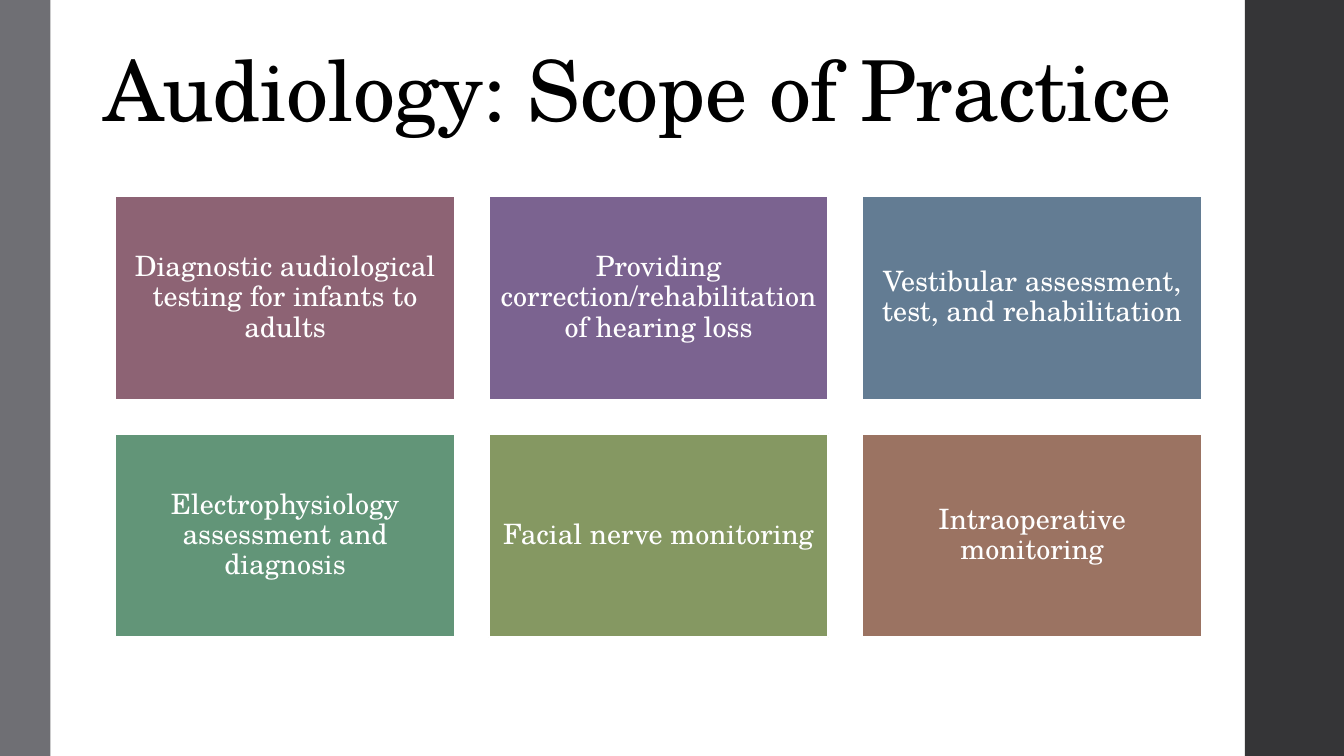
from dataclasses import dataclass

from pptx import Presentation
from pptx import util as u
from pptx.dml.color import RGBColor
from pptx.enum import shapes, text

FONT = "TeX Gyre Schola"
BLACK = RGBColor(0x00, 0x00, 0x00)
WHITE = RGBColor(0xFF, 0xFF, 0xFF)
GRAY = RGBColor(0x6F, 0x6F, 0x74)
CHARCOAL = RGBColor(0x35, 0x35, 0x37)
MAUVE = RGBColor(0x8D, 0x63, 0x74)
PURPLE = RGBColor(0x7B, 0x63, 0x90)
BLUE = RGBColor(0x63, 0x7C, 0x93)
GREEN = RGBColor(0x62, 0x95, 0x78)
OLIVE = RGBColor(0x85, 0x98, 0x62)
BROWN = RGBColor(0x9B, 0x73, 0x62)

SLIDE_WIDTH, SLIDE_HEIGHT = 960, 540
COLUMNS = 3
GRID_LEFT, GRID_TOP = 82.4, 139.9
TILE_WIDTH, TILE_HEIGHT = 242.6, 145.6
COLUMN_PITCH, ROW_PITCH = 266.8, 169.8


@dataclass(frozen=True)
class Box:
    left: float
    top: float
    width: float
    height: float


@dataclass(frozen=True)
class Tile:
    label: str
    color: RGBColor


TILES = (
    Tile("Diagnostic audiological testing for infants to adults", MAUVE),
    Tile("Providing correction/rehabilitation of hearing loss", PURPLE),
    Tile("Vestibular assessment, test, and rehabilitation", BLUE),
    Tile("Electrophysiology assessment and diagnosis", GREEN),
    Tile("Facial nerve monitoring", OLIVE),
    Tile("Intraoperative monitoring", BROWN),
)


def lengths(box: Box) -> tuple[u.Length, ...]:
    return u.Pt(box.left), u.Pt(box.top), u.Pt(box.width), u.Pt(box.height)


def add_rectangle(slide, box: Box, color: RGBColor):
    shape = slide.shapes.add_shape(shapes.MSO_SHAPE.RECTANGLE, *lengths(box))
    shape.shadow.inherit = False
    shape.fill.solid()
    shape.fill.fore_color.rgb = color
    shape.line.fill.background()
    return shape


def write(shape, wording: str, size: float, color: RGBColor, spacing: float):
    shape.text_frame.text = wording
    shape.text_frame.word_wrap = True
    paragraph = shape.text_frame.paragraphs[0]
    paragraph.line_spacing = spacing
    run = paragraph.runs[0]
    run.font.name = FONT
    run.font.size = u.Pt(size)
    run.font.color.rgb = color
    return paragraph


def add_title(slide, wording: str) -> None:
    title = slide.shapes.add_textbox(*lengths(Box(67, 6.5, 806.4, 95.8)))
    paragraph = write(title, wording, 60, BLACK, 0.85)
    title.text_frame.vertical_anchor = text.MSO_ANCHOR.BOTTOM
    paragraph.runs[0]._r.get_or_add_rPr().set("spc", "-50")


def add_tile(slide, tile: Tile, index: int) -> None:
    row, column = divmod(index, COLUMNS)
    box = Box(GRID_LEFT + column * COLUMN_PITCH, GRID_TOP + row * ROW_PITCH,
              TILE_WIDTH, TILE_HEIGHT)
    shape = add_rectangle(slide, box, tile.color)
    shape.line.color.rgb = WHITE
    shape.line.width = u.Pt(1.35)
    paragraph = write(shape, tile.label, 20, WHITE, 0.9)
    paragraph.alignment = text.PP_ALIGN.CENTER
    frame = shape.text_frame
    frame.vertical_anchor = text.MSO_ANCHOR.MIDDLE
    frame.margin_left = frame.margin_right = u.Pt(6)
    frame.margin_top = frame.margin_bottom = u.Pt(6)


def main() -> None:
    presentation = Presentation()
    presentation.slide_width = u.Pt(SLIDE_WIDTH)
    presentation.slide_height = u.Pt(SLIDE_HEIGHT)
    slide = presentation.slides.add_slide(presentation.slide_layouts[6])
    add_rectangle(slide, Box(889.2, 0, 70.8, SLIDE_HEIGHT), CHARCOAL)
    add_rectangle(slide, Box(0, 0, 36, SLIDE_HEIGHT), GRAY)
    add_title(slide, "Audiology: Scope of Practice")
    for index, tile in enumerate(TILES):
        add_tile(slide, tile, index)
    presentation.save("out.pptx")


if __name__ == "__main__":
    main()
